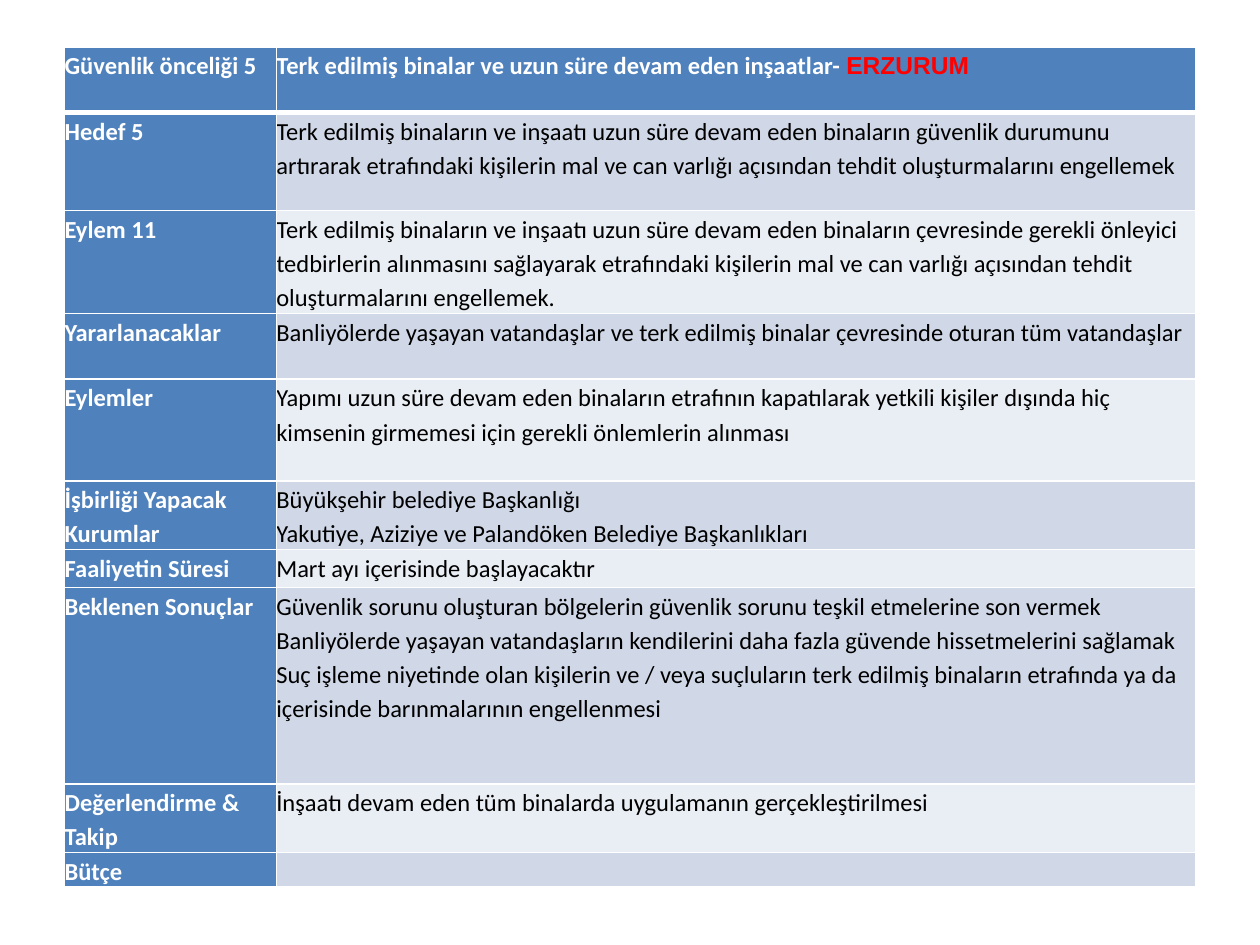
from dataclasses import dataclass

from lxml.etree import SubElement
from pptx import Presentation
from pptx.dml.color import RGBColor
from pptx.oxml.ns import qn
from pptx.util import Pt


@dataclass(frozen=True)
class Theme:
    heading_fill: RGBColor = RGBColor(0x4F, 0x81, 0xBD)
    band_fills: tuple = (RGBColor(0xE9, 0xED, 0xF4), RGBColor(0xD0, 0xD8, 0xE8))
    light: RGBColor = RGBColor(0xFF, 0xFF, 0xFF)
    dark: RGBColor = RGBColor(0, 0, 0)
    accent: RGBColor = RGBColor(0xFF, 0, 0)
    font: str = "Calibri"
    accent_font: str = "Arial"
    size: Pt = Pt(14)
    line_spacing: float = 1.15
    thin_border: Pt = Pt(1)
    thick_border: Pt = Pt(3)


THEME = Theme()
CITY = "ERZURUM"
COLUMN_WIDTHS = (121, 525.4)

# Row height, label, paragraphs
ROWS = (
    (37.4, "Güvenlik önceliği 5",
     ["Terk edilmiş binalar ve uzun süre devam eden inşaatlar- "]),
    (56.2, "Hedef 5",
     ["Terk edilmiş binaların ve inşaatı uzun süre devam eden binaların güvenlik durumunu "
      "artırarak etrafındaki kişilerin mal ve can varlığı açısından tehdit oluşturmalarını "
      "engellemek"]),
    (58.3, "Eylem 11",
     ["Terk edilmiş binaların ve inşaatı uzun süre devam eden binaların çevresinde gerekli "
      "önleyici tedbirlerin alınmasını sağlayarak etrafındaki kişilerin mal ve can varlığı "
      "açısından tehdit oluşturmalarını engellemek."]),
    (37.4, "Yararlanacaklar",
     ["Banliyölerde yaşayan vatandaşlar ve terk edilmiş binalar çevresinde oturan tüm "
      "vatandaşlar"]),
    (58.3, "Eylemler",
     ["Yapımı uzun süre devam eden binaların etrafının kapatılarak yetkili kişiler dışında "
      "hiç kimsenin girmemesi için gerekli önlemlerin alınması"]),
    (38.9, "İşbirliği Yapacak Kurumlar",
     ["Büyükşehir belediye Başkanlığı",
      "Yakutiye, Aziziye ve Palandöken Belediye Başkanlıkları"]),
    (21.6, "Faaliyetin Süresi", ["Mart ayı içerisinde başlayacaktır"]),
    (112.3, "Beklenen Sonuçlar",
     ["Güvenlik sorunu oluşturan bölgelerin güvenlik sorunu teşkil etmelerine son vermek",
      "Banliyölerde yaşayan vatandaşların kendilerini daha fazla güvende hissetmelerini "
      "sağlamak",
      "Suç işleme niyetinde olan kişilerin ve / veya suçluların terk edilmiş binaların "
      "etrafında ya da içerisinde barınmalarının engellenmesi"]),
    (38.9, "Değerlendirme & Takip",
     ["İnşaatı devam eden tüm binalarda uygulamanın gerçekleştirilmesi"]),
    (19.4, "Bütçe", [""]),
)


def set_borders(cell, top, bottom):
    """Draw light lines on all four sides; must run before the fill is set."""
    properties = cell._tc.get_or_add_tcPr()
    widths = {"lnL": THEME.thin_border, "lnR": THEME.thin_border, "lnT": top, "lnB": bottom}
    for side, width in widths.items():
        line = SubElement(properties, qn(f"a:{side}"), w=str(int(width)))
        fill = SubElement(line, qn("a:solidFill"))
        SubElement(fill, qn("a:srgbClr"), val=str(THEME.light))


def write_cell(cell, lines, fill, color, bold):
    cell.margin_left = cell.margin_right = cell.margin_top = cell.margin_bottom = 0
    cell.fill.solid()
    cell.fill.fore_color.rgb = fill
    cell.text = "\n".join(lines)
    for paragraph in cell.text_frame.paragraphs:
        paragraph.line_spacing = THEME.line_spacing
        font = paragraph.font
        font.name, font.size, font.bold = THEME.font, THEME.size, bold
        font.color.rgb = color


def add_city(cell):
    run = cell.text_frame.paragraphs[0].add_run()
    run.text = CITY
    run.font.name = THEME.accent_font
    run.font.color.rgb = THEME.accent


def add_plan_table(slide):
    height = sum(row[0] for row in ROWS)
    frame = slide.shapes.add_table(len(ROWS), len(COLUMN_WIDTHS), Pt(36.9), Pt(26.8),
                                   Pt(sum(COLUMN_WIDTHS)), Pt(height))
    table = frame.table
    table.first_row = table.horz_banding = False
    for column, width in zip(table.columns, COLUMN_WIDTHS):
        column.width = Pt(width)

    for index, (row_height, label, lines) in enumerate(ROWS):
        table.rows[index].height = Pt(row_height)
        label_cell, text_cell = table.rows[index].cells
        is_header = index == 0

        # A thick line separates the header from the rows below
        top = THEME.thick_border if index == 1 else THEME.thin_border
        bottom = THEME.thick_border if is_header else THEME.thin_border
        for cell in (label_cell, text_cell):
            set_borders(cell, top, bottom)

        write_cell(label_cell, [label], THEME.heading_fill, THEME.light, True)
        if is_header:
            write_cell(text_cell, lines, THEME.heading_fill, THEME.light, True)
            add_city(text_cell)
        else:
            write_cell(text_cell, lines, THEME.band_fills[index % 2], THEME.dark, False)


def main():
    presentation = Presentation()
    presentation.slide_width, presentation.slide_height = Pt(720), Pt(540)
    slide = presentation.slides.add_slide(presentation.slide_layouts[6])
    add_plan_table(slide)
    presentation.save("out.pptx")


if __name__ == "__main__":
    main()
